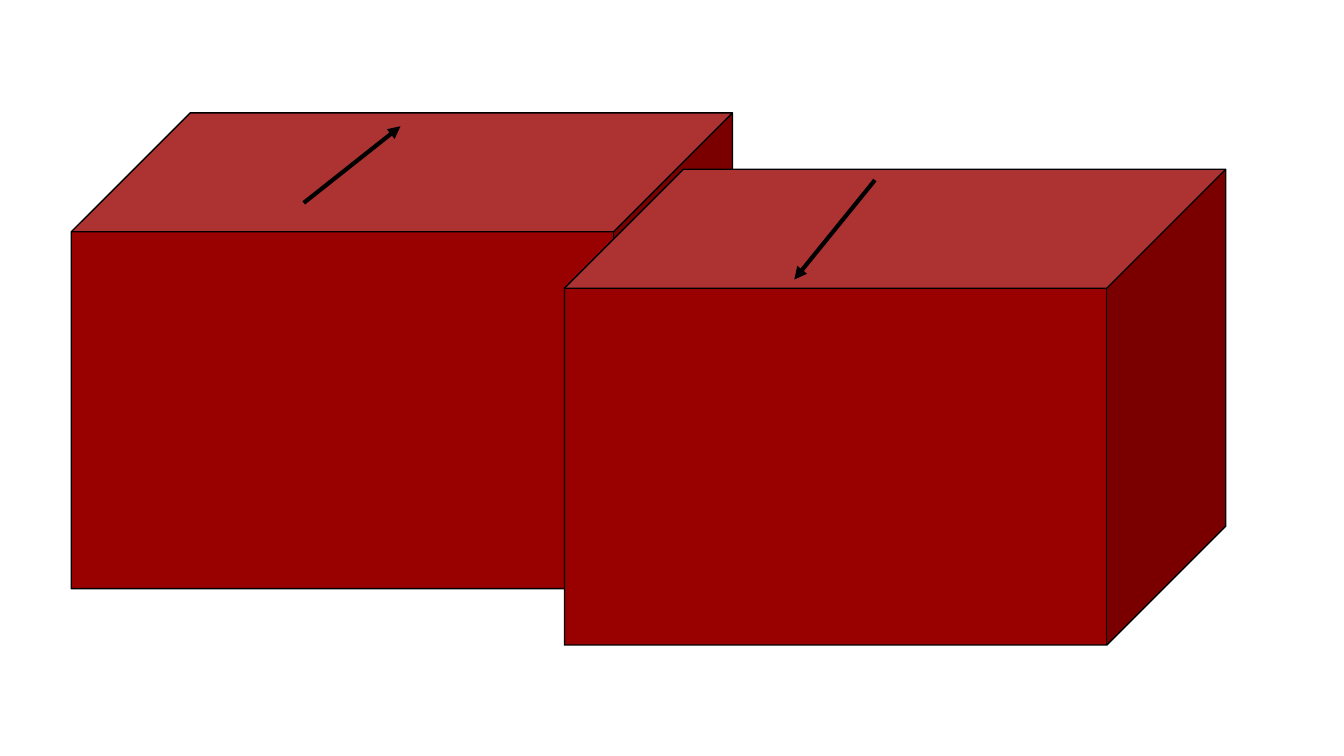
"""Build a slide with two blocks sliding past each other in opposite directions."""
import pptx
import pptx.dml.color
import pptx.enum.shapes
import pptx.oxml.ns
import pptx.util
from lxml import etree

Inches = pptx.util.Inches
Pt = pptx.util.Pt
RGBColor = pptx.dml.color.RGBColor
qn = pptx.oxml.ns.qn

WHITE = RGBColor(0xFF, 0xFF, 0xFF)
BLACK = RGBColor(0x00, 0x00, 0x00)
DARK_RED = RGBColor(0x99, 0x00, 0x00)

SLIDE_WIDTH = 10
SLIDE_HEIGHT = SLIDE_WIDTH * 9 / 16
BLOCK_WIDTH, BLOCK_HEIGHT = 4.92, 3.54
BLOCKS = [(0.53, 0.84), (4.2, 1.26)]
ARROWS = [((2.26, 1.51), (2.98, 0.94)), ((6.51, 1.34), (5.91, 2.08))]


class Diagram:
    def __init__(self, s, fill, ink):
        self.s = s
        self.fill = fill
        self.ink = ink

    def background(self, color):
        fill = self.s.background.fill
        fill.solid()
        fill.fore_color.rgb = color

    def outline(self, sp, width):
        sp.line.color.rgb = self.ink
        sp.line.width = Pt(width)

    def block(self, left, top):
        sp = self.s.shapes.add_shape(
            pptx.enum.shapes.MSO_SHAPE.CUBE,
            Inches(left), Inches(top), Inches(BLOCK_WIDTH), Inches(BLOCK_HEIGHT))
        sp.adjustments[0] = 0.25
        sp.shadow.inherit = False
        sp.fill.solid()
        sp.fill.fore_color.rgb = self.fill
        self.outline(sp, 0.75)

    def arrow(self, start, end):
        sp = self.s.shapes.add_connector(
            pptx.enum.shapes.MSO_CONNECTOR.STRAIGHT,
            *(Inches(v) for v in (*start, *end)))
        self.outline(sp, 2.25)
        etree.SubElement(sp.line._get_or_add_ln(), qn("a:tailEnd"), type="triangle")
        etree.SubElement(sp._element.spPr, qn("a:effectLst"))


def main():
    prs = pptx.Presentation()
    prs.slide_width = Inches(SLIDE_WIDTH)
    prs.slide_height = Inches(SLIDE_HEIGHT)
    diagram = Diagram(prs.slides.add_slide(prs.slide_layouts[6]), DARK_RED, BLACK)
    diagram.background(WHITE)
    for left, top in BLOCKS:
        diagram.block(left, top)
    for start, end in ARROWS:
        diagram.arrow(start, end)
    prs.save("out.pptx")


if __name__ == "__main__":
    main()
